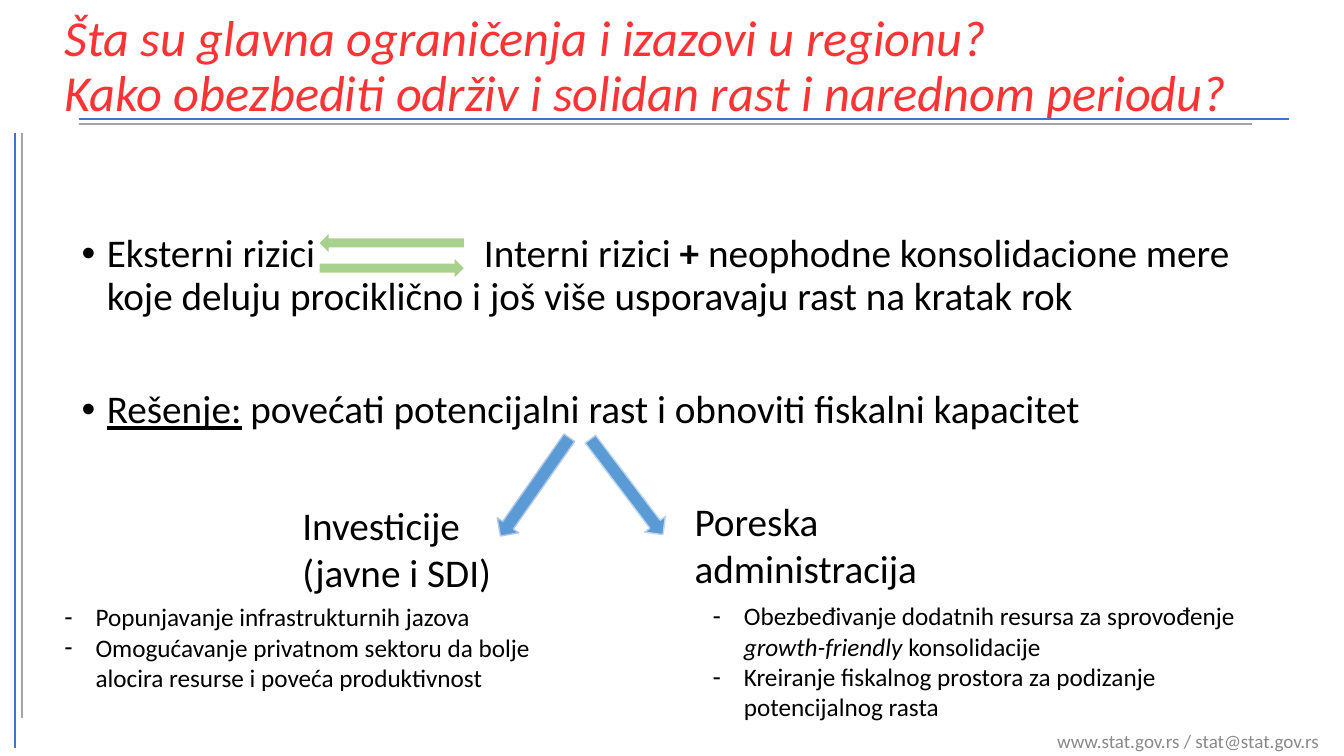
from lxml import etree
from pptx import Presentation
from pptx.dml.color import RGBColor
from pptx.enum.shapes import MSO_CONNECTOR as Link, MSO_SHAPE as Shape
from pptx.enum.text import MSO_ANCHOR as Anchor, MSO_AUTO_SIZE as Fit, PP_ALIGN as Align
from pptx.oxml.ns import qn
from pptx.util import Inches, Pt

HUES = {"red": "FF3333", "black": "000000", "gray": "898989", "rule": "4472C4",
        "pale": "A5A5A5", "green": "A9D18E", "blue": "5B9BD5",
        "left": "B4C7E7", "right": "BDD7EE"}


def hue(name):
    return RGBColor.from_string(HUES[name])


def write(box, at, paras, size, color="black", italic=False, bullet=None, dent=0,
          tab=None, gap=0, lead=1, align=Align.LEFT, anchor=Anchor.TOP):
    """Each paragraph is a list of runs: plain text, or (text, flag) with flag b, i or u."""
    box.left, box.top, box.width, box.height = map(Inches, at)
    frame = box.text_frame
    frame.word_wrap, frame.auto_size = True, Fit.NONE
    frame.vertical_anchor = anchor
    for n, runs in enumerate(paras):
        para = frame.add_paragraph() if n else frame.paragraphs[0]
        para.alignment, para.line_spacing = align, lead
        para.space_before = Pt(gap if n else 0)
        props = para._p.get_or_add_pPr()
        if bullet:
            props.set("marL", str(Inches(dent)))
            props.set("indent", str(-Inches(dent)))
            etree.SubElement(props, qn("a:buFont")).set("typeface", "Arial")
            etree.SubElement(props, qn("a:buChar")).set("char", bullet)
        if tab:
            tabs = etree.SubElement(props, qn("a:tabLst"))
            etree.SubElement(tabs, qn("a:tab"), pos=str(Inches(tab)), algn="l")
        for item in runs:
            text, flag = (item, "") if isinstance(item, str) else item
            if text == "\v":
                para.add_line_break()
                continue
            run = para.add_run()
            run.text = text
            font = run.font
            font.name, font.size, font.color.rgb = "Calibri", Pt(size), hue(color)
            font.bold, font.italic = flag == "b", italic or flag == "i"
            font.underline = flag == "u"


deck = Presentation()
deck.slide_width, deck.slide_height = Inches(13.33), Inches(7.5)
slide = deck.slides.add_slide(deck.slide_layouts[1])
shapes = slide.shapes

# Double rules beside and above the content
for x1, y1, x2, y2, color in [(0.15, 1.32, 0.15, 7.42, "rule"),
                              (0.22, 1.32, 0.22, 7.12, "pale"),
                              (0.78, 1.18, 12.78, 1.18, "rule"),
                              (0.78, 1.23, 12.42, 1.23, "pale")]:
    rule = shapes.add_connector(Link.STRAIGHT, *map(Inches, (x1, y1, x2, y2)))
    rule.line.color.rgb, rule.line.width = hue(color), Pt(1.75)
    etree.SubElement(rule._element.spPr, qn("a:effectLst"))

write(shapes.title, (0.54, 0.04, 12.01, 1.26),
      [["Šta su glavna ograničenja i izazovi u regionu?", "\v",
        "Kako obezbediti održiv i solidan rast i narednom periodu?"]],
      36, color="red", italic=True, lead=0.9, anchor=Anchor.MIDDLE)

write(slide.placeholders[1], (0.71, 2.27, 11.64, 3.64),
      [["Eksterni rizici\tInterni rizici ", ("+", "b"),
        " neophodne konsolidacione mere koje deluju prociklično"
        " i još više usporavaju rast na kratak rok"],
       [("Rešenje:", "u"), " povećati potencijalni rast i obnoviti fiskalni kapacitet"]],
      28, bullet="•", dent=0.25, tab=3.99, gap=51, lead=0.9)

# Arrows between the risks, then from the solution to its two branches
for x, y, w, h, turn, color, edge in [(3.17, 2.57, 1.43, 0.18, 0, "green", None),
                                      (3.17, 2.32, 1.43, 0.18, 180, "green", None),
                                      (5.62, 4.7, 1.19, 0.26, 52.8, "blue", "right"),
                                      (4.71, 4.7, 1.19, 0.26, 125, "blue", "left")]:
    arrow = shapes.add_shape(Shape.RIGHT_ARROW, *map(Inches, (x, y, w, h)))
    arrow.rotation, arrow.shadow.inherit = turn, False
    arrow.fill.solid()
    arrow.fill.fore_color.rgb = hue(color)
    if edge:
        arrow.line.color.rgb, arrow.line.width = hue(edge), Pt(1)
    else:
        arrow.line.fill.background()

heads = [((2.9, 4.92, 2.56, 1.04), [["Investicije (javne i SDI)"]]),
         ((6.79, 4.88, 3.79, 1.04), [["Poreska"], ["administracija"]])]
for at, paras in heads:
    write(shapes.add_textbox(0, 0, 0, 0), at, paras, 28)

lists = [((0.54, 5.92, 5.26, 1.01),
          [["Popunjavanje infrastrukturnih jazova"],
           ["Omogućavanje privatnom sektoru da bolje alocira resurse"
            " i poveća produktivnost"]]),
         ((6.97, 5.91, 5.86, 1.31),
          [["Obezbeđivanje dodatnih resursa za sprovođenje ",
            ("growth-friendly", "i"), " konsolidacije"],
           ["Kreiranje fiskalnog prostora za podizanje potencijalnog rasta"]])]
for at, paras in lists:
    write(shapes.add_textbox(0, 0, 0, 0), at, paras, 18, bullet="-", dent=0.31)

write(shapes.add_textbox(0, 0, 0, 0), (8.67, 7.2, 4.51, 0.3),
      [["www.stat.gov.rs / stat@stat.gov.rs"]],
      13.6, color="gray", align=Align.RIGHT, anchor=Anchor.MIDDLE)

deck.save("out.pptx")
